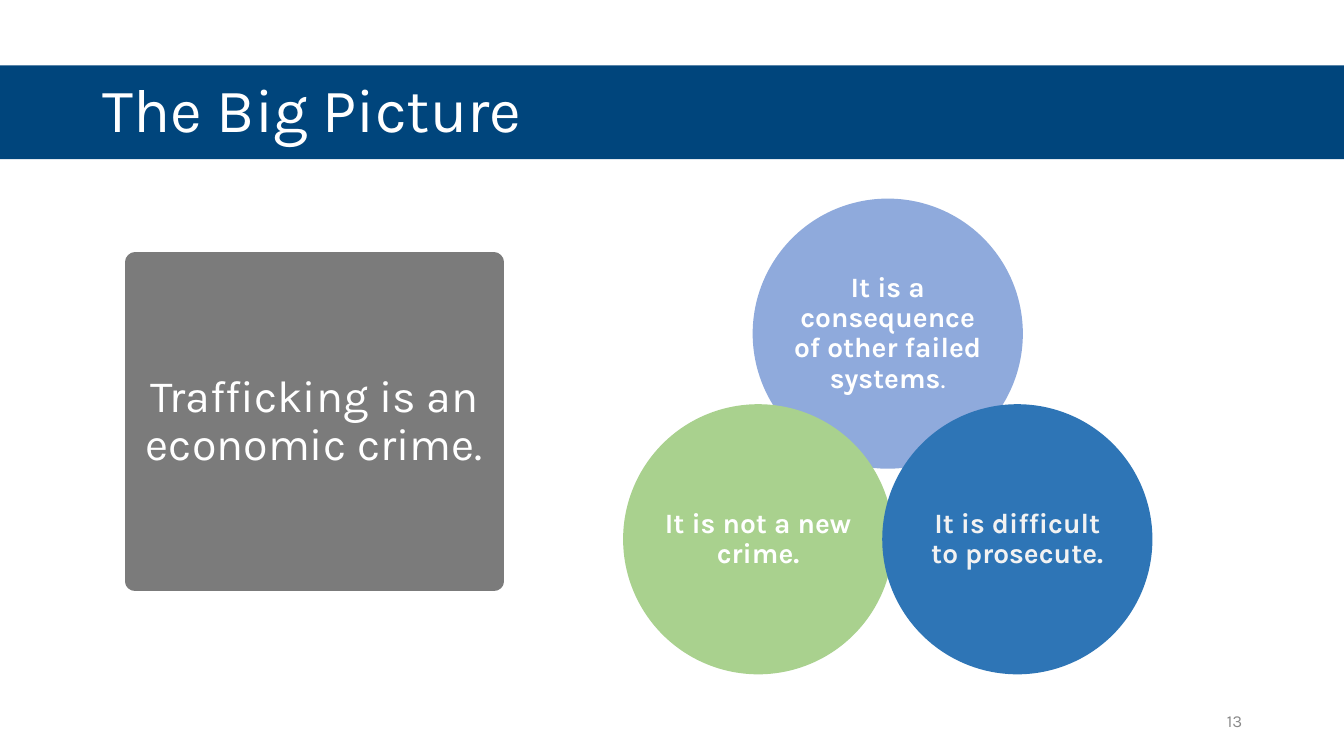
from pptx import Presentation
from pptx.dml.color import RGBColor
from pptx.enum.shapes import MSO_SHAPE
from pptx.enum.text import MSO_ANCHOR, PP_ALIGN
from pptx.util import Inches, Pt

RECTANGLE, OVAL = MSO_SHAPE.RECTANGLE, MSO_SHAPE.OVAL
LEFT, CENTER, RIGHT = PP_ALIGN.LEFT, PP_ALIGN.CENTER, PP_ALIGN.RIGHT
MIDDLE = MSO_ANCHOR.MIDDLE

NAVY = RGBColor(0x00, 0x45, 0x7C)
PERIWINKLE = RGBColor(0x8F, 0xAA, 0xDC)
GREEN = RGBColor(0xA9, 0xD1, 0x8E)
BLUE = RGBColor(0x2E, 0x75, 0xB6)
GRAY = RGBColor(0x7B, 0x7B, 0x7B)
PAGE_GRAY = RGBColor(0x89, 0x89, 0x89)
OFF_WHITE = RGBColor(0xF2, 0xF2, 0xF2)
WHITE = RGBColor(0xFF, 0xFF, 0xFF)

FONT = "Karla"
SLIDE_WIDTH, SLIDE_HEIGHT = 13.33, 7.5
CIRCLE_SIZE = 2.68


def add_shape(slide, kind, box, fill):
    shape = slide.shapes.add_shape(kind, *map(Inches, box))
    shape.shadow.inherit = False
    shape.fill.solid()
    shape.fill.fore_color.rgb = fill
    shape.line.fill.background()
    return shape


def write_text(shape, text, *, size, color=WHITE, bold=False, align=CENTER,
               spacing=0.9, margin=None, plain_ending=""):
    frame = shape.text_frame
    frame.word_wrap = True
    frame.vertical_anchor = MIDDLE
    if margin is not None:
        frame.margin_left = frame.margin_right = Inches(margin)
        frame.margin_top = frame.margin_bottom = Inches(margin)
    paragraph = frame.paragraphs[0]
    paragraph.alignment = align
    paragraph.line_spacing = spacing
    for content, weight in ((text, bold), (plain_ending, False)):
        if content:
            run = paragraph.add_run()
            run.text = content
            run.font.name = FONT
            run.font.size = Pt(size)
            run.font.bold = weight
            run.font.color.rgb = color


def add_title_band(slide, box, title):
    left, top, width, height = box
    add_shape(slide, RECTANGLE, box, NAVY)
    title_box = slide.shapes.add_textbox(
        Inches(left + 0.92), Inches(top - 0.26), Inches(11.5), Inches(height + 0.52))
    write_text(title_box, title, size=44, align=LEFT)


def add_statement(slide, box, statement):
    panel = add_shape(slide, RECTANGLE, box, GRAY)
    panel.line.color.rgb = GRAY
    panel.line.width = Pt(13.75)
    write_text(panel, statement, size=32)


def add_circle_trio(slide, box):
    left, top, width, height = box
    right = left + width - CIRCLE_SIZE
    bottom = top + height - CIRCLE_SIZE
    circles = (
        ((left + right) / 2, top, PERIWINKLE, WHITE,
         "It is a consequence of other failed systems", "."),
        (left, bottom, GREEN, WHITE, "It is not a new crime.", ""),
        (right, bottom, BLUE, OFF_WHITE, "It is difficult to prosecute.", ""),
    )
    for x, y, fill, color, text, ending in circles:
        circle = add_shape(slide, OVAL, (x, y, CIRCLE_SIZE, CIRCLE_SIZE), fill)
        write_text(circle, text, size=20, color=color, bold=True, margin=0,
                   plain_ending=ending)


def add_page_number(slide, box, number):
    page_box = slide.shapes.add_textbox(*map(Inches, box))
    write_text(page_box, number, size=12, color=PAGE_GRAY, align=RIGHT, spacing=1.0)


def main():
    presentation = Presentation()
    presentation.slide_width = Inches(SLIDE_WIDTH)
    presentation.slide_height = Inches(SLIDE_HEIGHT)
    slide = presentation.slides.add_slide(presentation.slide_layouts[6])
    add_title_band(slide, (0, 0.65, SLIDE_WIDTH, 0.93), "The Big Picture")
    add_circle_trio(slide, (6.18, 1.97, 5.25, 4.72))
    add_statement(slide, (1.34, 2.6, 3.56, 3.17), "Trafficking is an economic crime.")
    add_page_number(slide, (9.42, 6.95, 3, 0.4), "13")
    presentation.save("out.pptx")


if __name__ == "__main__":
    main()
